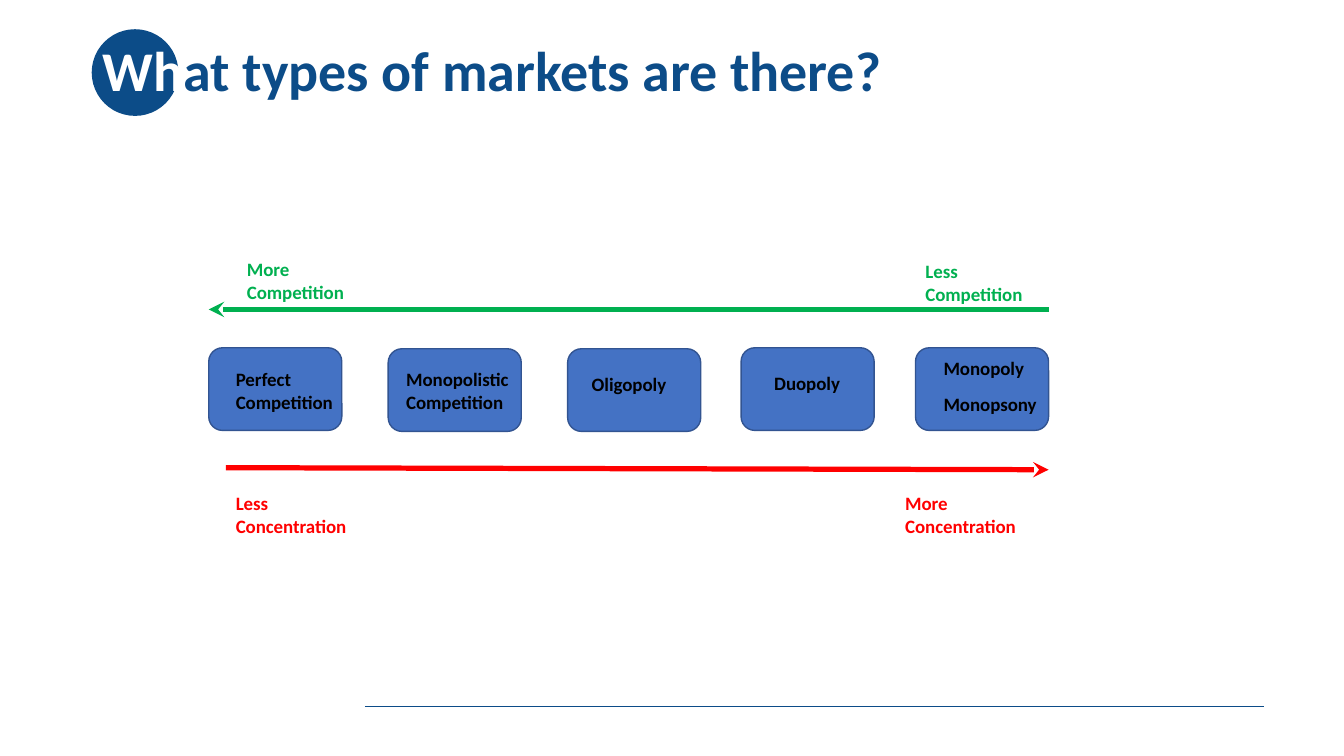
from dataclasses import dataclass

from lxml.etree import SubElement
from pptx import Presentation
from pptx.dml.color import RGBColor
from pptx.enum.shapes import MSO_CONNECTOR as Connector, MSO_SHAPE as Preset
from pptx.enum.text import MSO_ANCHOR as Anchor, MSO_AUTO_SIZE as AutoSize, PP_ALIGN as Align
from pptx.oxml.ns import qn
from pptx.util import Inches, Pt

# Grid: 133.3 columns by 75 rows, each a tenth of an inch
CELL = Inches(0.1)
COLUMNS, ROWS = 133.3, 75
BOX_WIDTH, BOX_HEIGHT, BOX_TOP = 13.2, 8.2, 34.5
ONE_LINE, TWO_LINES = 3.3, 5.6


@dataclass(frozen=True)
class Theme:
    font: str = "Calibri"
    title_size: float = 40
    label_size: float = 13.5
    navy: str = "0C4C88"
    white: str = "FFFFFF"
    black: str = "000000"
    box_fill: str = "4472C4"
    box_edge: str = "325491"
    competition: str = "00B050"
    concentration: str = "FF0000"
    hairline: float = 0.5
    edge: float = 1
    arrow: float = 3.75


@dataclass(frozen=True)
class Label:
    text: str
    left: float
    top: float
    width: float = BOX_WIDTH
    height: float = ONE_LINE
    color: str = Theme.black


@dataclass(frozen=True)
class Market:
    left: float
    names: tuple[Label, ...]  # placed relative to the box corner
    drop: float = 0


@dataclass(frozen=True)
class Scale:
    start: tuple[float, float]
    end: tuple[float, float]
    color: str
    ends: tuple[Label, ...]


THEME = Theme()
GREEN, RED = THEME.competition, THEME.concentration

MARKETS = (
    Market(20.7, (Label("Perfect Competition", 1.7, 1.5, 14.3, TWO_LINES),)),
    Market(38.5, (Label("Monopolistic Competition", 0.8, 1.4, height=TWO_LINES),), 0.1),
    Market(56.3, (Label("Oligopoly", 1.4, 1.9),), 0.1),
    Market(73.5, (Label("Duopoly", 2.3, 1.9),)),
    Market(90.8, (Label("Monopoly", 1.8, 0.4), Label("Monopsony", 1.8, 4))),
)

SCALES = (
    Scale((104, 30.7), (20.7, 30.7), GREEN, (
        Label("Less Competition", 90.8, 25.3, 12.5, TWO_LINES, GREEN),
        Label("More Competition", 23.5, 25.1, 12.5, TWO_LINES, GREEN))),
    Scale((22.4, 46.4), (104, 46.6), RED, (
        Label("Less Concentration", 22.4, 48.3, 14.3, TWO_LINES, RED),
        Label("More Concentration", 88.8, 48.3, 14.3, TWO_LINES, RED))),
)


def cells(*counts: float) -> list[int]:
    return [round(count * CELL) for count in counts]


def apply(target, formats: dict) -> None:
    for name, value in formats.items():
        setattr(target, name, value)


def write(paragraph, text: str, size: float, color: str) -> None:
    run = paragraph.add_run()
    run.text = text
    apply(run.font, {"name": THEME.font, "size": Pt(size), "bold": True})
    run.font.color.rgb = RGBColor.from_string(color)


def add_block(slide, preset, place: tuple, fill: str, edge: str | None = None) -> None:
    block = slide.shapes.add_shape(preset, *cells(*place))
    block.shadow.inherit = False
    block.fill.solid()
    block.fill.fore_color.rgb = RGBColor.from_string(fill)
    if edge:
        block.line.color.rgb = RGBColor.from_string(edge)
        block.line.width = Pt(THEME.edge)
    else:
        block.line.fill.background()


def add_label(slide, label: Label, left: float = 0, top: float = 0) -> None:
    place = cells(left + label.left, top + label.top, label.width, label.height)
    frame = slide.shapes.add_textbox(*place).text_frame
    apply(frame, {"word_wrap": True, "auto_size": AutoSize.SHAPE_TO_FIT_TEXT})
    write(frame.paragraphs[0], label.text, THEME.label_size, label.color)


def add_line(slide, start: tuple, end: tuple, color: str, width: float,
             arrow: bool = False) -> None:
    line = slide.shapes.add_connector(Connector.STRAIGHT, *cells(*start, *end))
    line.line.color.rgb = RGBColor.from_string(color)
    line.line.width = Pt(width)
    if arrow:
        SubElement(line.line._get_or_add_ln(), qn("a:tailEnd"), type="stealth")
    SubElement(line._element.spPr, qn("a:effectLst"))


def add_title(slide) -> None:
    title = slide.shapes.title
    left, top, width, height = cells(9.2, 0, 115, 14.5)
    apply(title, {"left": left, "top": top, "width": width, "height": height})
    apply(title.text_frame, {"vertical_anchor": Anchor.MIDDLE, "word_wrap": True,
                             "auto_size": AutoSize.NONE})
    heading = title.text_frame.paragraphs[0]
    apply(heading, {"alignment": Align.LEFT, "line_spacing": 0.9})
    write(heading, "Wh", THEME.title_size, THEME.white)
    write(heading, "at types of markets are there?", THEME.title_size, THEME.navy)
    # Bring the title in front of its disc
    slide.shapes._spTree.append(title._element)


def main() -> None:
    deck = Presentation()
    deck.slide_width, deck.slide_height = cells(COLUMNS, ROWS)
    slide = deck.slides.add_slide(deck.slide_layouts[5])

    # Footer rule, disc and title
    add_line(slide, (36.2, 70.1), (125.4, 70.1), THEME.navy, THEME.hairline)
    add_block(slide, Preset.OVAL, (9.1, 2.9, 8.6, 8.6), THEME.navy)
    add_title(slide)

    # Market types
    for market in MARKETS:
        top = BOX_TOP + market.drop
        add_block(slide, Preset.ROUNDED_RECTANGLE, (market.left, top, BOX_WIDTH, BOX_HEIGHT),
                  THEME.box_fill, THEME.box_edge)
        for name in market.names:
            add_label(slide, name, market.left, top)

    # Competition and concentration scales
    for scale in SCALES:
        add_line(slide, scale.start, scale.end, scale.color, THEME.arrow, arrow=True)
        for label in scale.ends:
            add_label(slide, label)

    deck.save("out.pptx")


if __name__ == "__main__":
    main()
